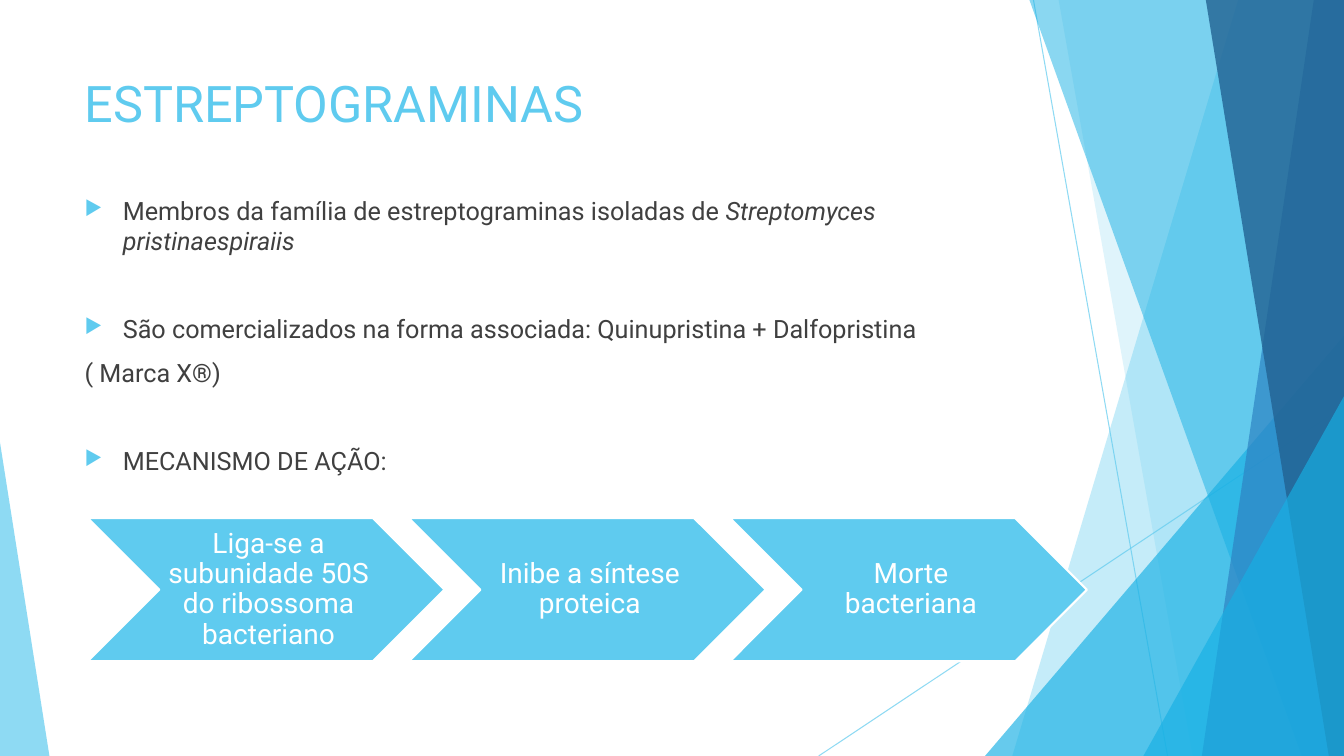
from lxml import etree
from pptx import Presentation
from pptx.dml.color import RGBColor
from pptx.enum import shapes, text
from pptx.oxml.ns import qn
from pptx.util import Inches, Pt

SKY = RGBColor(0x5F, 0xCB, 0xEF)
CYAN = RGBColor(0x17, 0xB0, 0xE4)
BLUE = RGBColor(0x2E, 0x83, 0xC3)
NAVY = RGBColor(0x22, 0x62, 0x92)
GREY = RGBColor(0x40, 0x40, 0x40)
WHITE = RGBColor(0xFF, 0xFF, 0xFF)
FONT = "Roboto"
WIDTH, HEIGHT = 13.33, 7.5

RAYS = [  # left end of the top edge, left end of the bottom edge, colour, opacity
    (12.28, 10.04, SKY, 36),
    (10.5, 11.83, SKY, 20),
    (10.21, 12.91, CYAN, 50),
    (13.03, 11.92, BLUE, 70),
    (11.96, 13.18, NAVY, 80),
]
BULLETS = [  # runs as (text, italic), has bullet, space before
    ([("Membros da família de estreptograminas isoladas de ", False),
      ("Streptomyces pristinaespiraiis", True)], True, 0),
    ([("São comercializados na forma associada: Quinupristina + Dalfopristina", False)],
     True, 41),
    ([("( Marca X®)", False)], False, 10),
    ([("MECANISMO DE AÇÃO:", False)], True, 41),
]
STEPS = [
    "Liga-se a subunidade 50S do ribossoma bacteriano",
    "Inibe a síntese proteica",
    "Morte bacteriana",
]


def add_run(paragraph, content, size=18, color=GREY, italic=False):
    run = paragraph.add_run()
    run.text = content
    font = run.font
    font.name, font.size, font.italic = FONT, Pt(size), italic
    font.color.rgb = color


def set_opacity(element, percent):
    """Set the opacity of the solid colour held by a fill or line element."""
    color = next(element.iter(qn("a:srgbClr")))
    etree.SubElement(color, qn("a:alpha"), val=str(percent * 1000))


def paint(shape, color, opacity):
    shape.shadow.inherit = False
    shape.fill.solid()
    shape.fill.fore_color.rgb = color
    set_opacity(shape.fill._xPr, opacity)
    shape.line.fill.background()


def add_thin_line(slide, start, end):
    line = slide.shapes.add_connector(
        shapes.MSO_CONNECTOR.STRAIGHT, *map(Inches, start + end))
    line.line.color.rgb = SKY
    line.line.width = Pt(0.75)
    properties = line._element.spPr
    set_opacity(properties, 70)
    etree.SubElement(properties, qn("a:effectLst"))


def add_ray(slide, top_x, bottom_x, color, opacity):
    """Draw a band from the top to the bottom edge, filled to the right edge."""
    builder = slide.shapes.build_freeform(Inches(top_x), 0)
    corners = [(WIDTH, 0), (WIDTH, HEIGHT), (bottom_x, HEIGHT)]
    builder.add_line_segments([(Inches(x), Inches(y)) for x, y in corners])
    paint(builder.convert_to_shape(), color, opacity)


def add_corner(slide, left, top, width, apex, color, opacity):
    """Draw a triangle standing on the bottom edge, its apex at 0 left or 1 right."""
    shape = slide.shapes.add_shape(
        shapes.MSO_SHAPE.ISOSCELES_TRIANGLE,
        *map(Inches, (left, top, width, HEIGHT - top)))
    shape.adjustments[0] = apex
    paint(shape, color, opacity)


def add_background(slide):
    add_thin_line(slide, (10.25, 0), (11.58, HEIGHT))
    add_thin_line(slide, (WIDTH, 4.03), (8.12, HEIGHT))
    for ray in RAYS[:2]:
        add_ray(slide, *ray)
    add_corner(slide, 9.77, 3.33, 3.56, 1, CYAN, 66)
    for ray in RAYS[2:]:
        add_ray(slide, *ray)
    add_corner(slide, 11.34, 3.93, 1.99, 1, CYAN, 66)
    add_corner(slide, 0, 4.39, 0.49, 0, SKY, 70)


def add_text_frame(slide, left, top, width, height):
    box = slide.shapes.add_textbox(*map(Inches, (left, top, width, height)))
    box.text_frame.word_wrap = True
    return box.text_frame


def add_title(slide, left, top, width, height):
    frame = add_text_frame(slide, left, top, width, height)
    add_run(frame.paragraphs[0], "ESTREPTOGRAMINAS", size=36, color=SKY)


def add_bullet(paragraph):
    properties = paragraph._p.get_or_add_pPr()
    properties.set("marL", str(Inches(0.38)))
    properties.set("indent", str(-Inches(0.38)))
    color = etree.SubElement(properties, qn("a:buClr"))
    etree.SubElement(color, qn("a:srgbClr"), val=str(SKY))
    etree.SubElement(properties, qn("a:buSzPct"), val="80000")
    etree.SubElement(properties, qn("a:buChar"), char="▶")


def add_body(slide, left, top, width, height):
    frame = add_text_frame(slide, left, top, width, height)
    for index, (runs, has_bullet, space) in enumerate(BULLETS):
        paragraph = frame.add_paragraph() if index else frame.paragraphs[0]
        paragraph.space_before = Pt(space)
        if has_bullet:
            add_bullet(paragraph)
        for content, italic in runs:
            add_run(paragraph, content, italic=italic)


def add_process(slide, left, top, width, height):
    """Fill the box with chevrons that overlap by a tenth of their width."""
    step_width = width / (1 + 0.9 * (len(STEPS) - 1))
    for index, step in enumerate(STEPS):
        step_left = left + index * 0.9 * step_width
        chevron = slide.shapes.add_shape(
            shapes.MSO_SHAPE.CHEVRON,
            *map(Inches, (step_left, top, step_width, height)))
        chevron.shadow.inherit = False
        chevron.fill.solid()
        chevron.fill.fore_color.rgb = SKY
        chevron.line.color.rgb = WHITE
        chevron.line.width = Pt(1.5)
        frame = chevron.text_frame
        frame.word_wrap = True
        frame.vertical_anchor = text.MSO_ANCHOR.MIDDLE
        frame.margin_left = Inches(0.08)
        frame.margin_right = frame.margin_top = frame.margin_bottom = Inches(0.03)
        paragraph = frame.paragraphs[0]
        paragraph.alignment = text.PP_ALIGN.CENTER
        paragraph.line_spacing = 0.9
        add_run(paragraph, step, size=20, color=WHITE)


def main():
    presentation = Presentation()
    presentation.slide_width = Inches(WIDTH)
    presentation.slide_height = Inches(HEIGHT)
    slide = presentation.slides.add_slide(presentation.slide_layouts[6])
    add_background(slide)
    add_title(slide, 0.74, 0.67, 9.4, 1.44)
    add_body(slide, 0.74, 1.89, 9.4, 4.24)
    add_process(slide, 0.87, 5.14, 9.91, 1.42)
    presentation.save("out.pptx")


if __name__ == "__main__":
    main()
